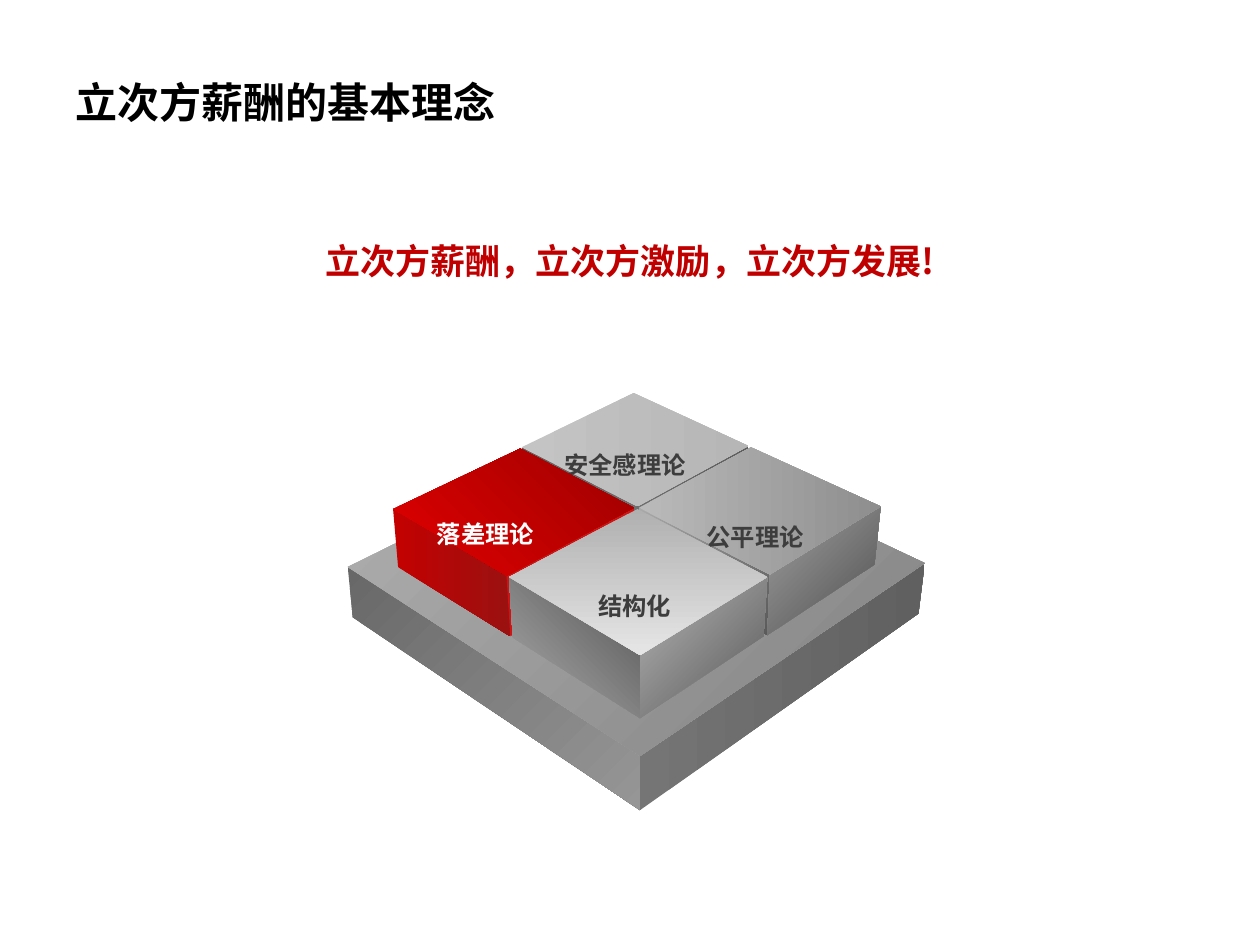
from dataclasses import dataclass

from lxml.etree import SubElement
from pptx import Presentation
from pptx.dml.color import RGBColor
from pptx.enum.text import MSO_ANCHOR, MSO_AUTO_SIZE, PP_ALIGN
from pptx.oxml.ns import qn
from pptx.util import Inches, Pt


@dataclass(frozen=True)
class Theme:
    font: str = "Noto Sans CJK SC"
    title_color: str = "000000"
    slogan_color: str = "C00000"
    dark_label: str = "3D3D3D"
    light_label: str = "FFFFFF"
    title_size: int = 24
    slogan_size: int = 20
    label_size: int = 24
    base_faces: tuple = (("686868", "969696", 45), ("757575", "606060", 0), ("B0B0B0", "828282", 45))
    security_faces: tuple = (("5E5E5E", "7F7F7F", 90), ("5E5E5E", "7F7F7F", 90), ("C4C4C4", "B6B6B6", 0))
    gap_faces: tuple = (("C40000", "9B1111", 0), ("CC1616", "CC1616", 0), ("E20000", "9E0000", 315))
    fairness_faces: tuple = (("A9A9A9", "5A5A5A", 45), ("A1A1A1", "4D4D4D", 45), ("BABABA", "8E8E8E", 0))
    structure_faces: tuple = (("ADADAD", "545454", 315), ("B8B8B8", "545454", 45), ("B0B0B0", "E6E6E6", 90))


theme = Theme()


def write_text(para, text, size, color):
    span = para.add_run()
    span.text = text
    span.font.name = theme.font
    span.font.size = Pt(size)
    span.font.bold = True
    span.font.color.rgb = RGBColor.from_string(color)
    SubElement(span.font._element, qn("a:ea"), typeface=theme.font)
    return span


def draw_face(shapes, corners, colors):
    start, end, angle = colors
    points = [(Inches(x), Inches(y)) for x, y in corners]
    builder = shapes.build_freeform(*points[0])
    builder.add_line_segments(points[1:], close=True)
    face = builder.convert_to_shape()
    face.shadow.inherit = False
    face.line.fill.background()
    if start == end:
        face.fill.solid()
        face.fill.fore_color.rgb = RGBColor.from_string(start)
    else:
        face.fill.gradient()
        face.fill.gradient_angle = (360 - angle) % 360
        for stop, color, position in zip(face.fill.gradient_stops, (start, end), (0, 1)):
            stop.color.rgb = RGBColor.from_string(color)
            stop.position = position


deck = Presentation()
deck.slide_width = Inches(10)
deck.slide_height = Inches(7.5)
page = deck.slides.add_slide(deck.slide_layouts[1])

title = page.shapes.title
title.left, title.top, title.width, title.height = Inches(0.5), Inches(0.3), Inches(5.29), Inches(1.01)
title.text_frame.vertical_anchor = MSO_ANCHOR.MIDDLE
para = title.text_frame.paragraphs[0]
para.alignment = PP_ALIGN.LEFT
write_text(para, "立次方薪酬的基本理念", theme.title_size, theme.title_color)

slogan = page.placeholders[1]
slogan.left, slogan.top, slogan.width, slogan.height = Inches(0.5), Inches(1.85), Inches(9), Inches(0.8)
para = slogan.text_frame.paragraphs[0]
properties = para._p.get_or_add_pPr()
properties.set("marL", "0")
properties.set("indent", "0")
SubElement(properties, qn("a:buNone"))
para.alignment = PP_ALIGN.CENTER
para.space_before = Pt(0)
write_text(para, "立次方薪酬，立次方激励，立次方发展!", theme.slogan_size, theme.slogan_color)

# Top corners run back, left, front, right; lower corners run left, front, right.
blocks = [
    (((5.03, 3.38), (2.76, 4.5), (5.08, 6), (7.34, 4.47)),
     ((2.8, 4.9), (5.08, 6.43), (7.29, 4.87)), theme.base_faces, None),
    (((5.03, 3.12), (4.14, 3.55), (5.06, 4.02), (5.94, 3.54)),
     ((4.16, 3.99), (5.06, 4.48), (5.92, 3.98)), theme.security_faces,
     ("安全感理论", 4.38, 3.3, 1.37, theme.dark_label)),
    (((4.13, 3.56), (3.12, 4.04), (4.02, 4.57), (5.03, 4.03)),
     ((3.16, 4.5), (4.05, 5.05), (5.03, 4.49)), theme.gap_faces,
     ("落差理论", 3.37, 3.85, 1.24, theme.light_label)),
    (((5.96, 3.55), (5.07, 4.03), (6.11, 4.56), (6.99, 4.02)),
     ((5.07, 4.49), (6.09, 5.04), (6.94, 4.48)), theme.fairness_faces,
     ("公平理论", 5.51, 3.87, 1.65, theme.dark_label)),
    (((5.06, 4.04), (4.04, 4.58), (5.08, 5.2), (6.09, 4.58)),
     ((4.07, 5.06), (5.08, 5.7), (6.06, 5.05)), theme.structure_faces,
     ("结构化", 4.65, 4.42, 1.65, theme.dark_label)),
]

for top, lower, faces, label in blocks:
    back, left, front, right = top
    low_left, low_front, low_right = lower
    outlines = ((left, front, low_front, low_left), (front, right, low_right, low_front), top)
    for corners, colors in zip(outlines, faces):
        draw_face(page.shapes, corners, colors)
    if label:
        text, x, y, width, color = label
        box = page.shapes.add_textbox(Inches(x), Inches(y), Inches(width), Inches(0.37))
        box.text_frame.word_wrap = True
        box.text_frame.auto_size = MSO_AUTO_SIZE.SHAPE_TO_FIT_TEXT
        span = write_text(box.text_frame.paragraphs[0], text, theme.label_size, color)
        span.font._element.set("baseline", "-25000")

deck.save("out.pptx")
